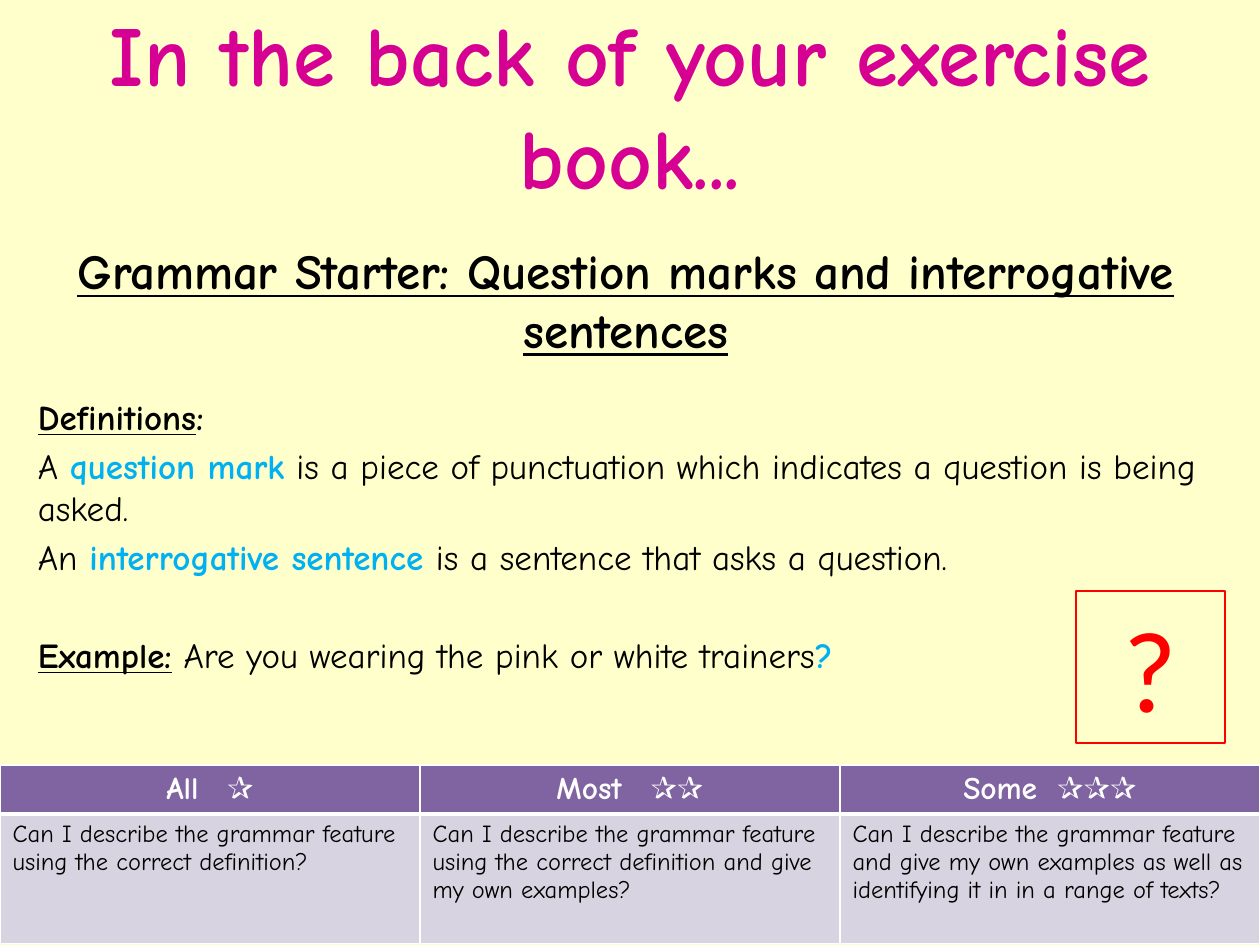
from lxml.etree import SubElement
from pptx import Presentation
from pptx.dml.color import RGBColor
from pptx.enum.text import MSO_ANCHOR, MSO_AUTO_SIZE, PP_ALIGN as Align
from pptx.oxml.ns import qn
from pptx.util import Inches, Pt

CREAM = RGBColor(0xFF, 0xFF, 0xCC)
PINK = RGBColor(0xD6, 0x00, 0x93)
BLACK = RGBColor(0, 0, 0)
SKY = RGBColor(0x00, 0xB0, 0xF0)
RED = RGBColor(0xFF, 0, 0)
WHITE = RGBColor(0xFF, 0xFF, 0xFF)
PURPLE = RGBColor(0x80, 0x64, 0xA2)
LILAC = RGBColor(0xD8, 0xD3, 0xE0)
HAND_FONT = "Comic Neue"

# Run styles: colour, bold, underline
PLAIN = (BLACK, False, False)
BOLD = (BLACK, True, False)
HEADING = (BLACK, True, True)
KEY = (SKY, True, False)

TITLE = "In the back of your exercise book..."
# Alignment, size, space before, runs
BODY = [
    (Align.CENTER, 28, 5.6, [
        ("Grammar Starter: Question marks and interrogative sentences", HEADING)]),
    (Align.JUSTIFY, 20, 21, [("Definitions", HEADING), (": ", BOLD)]),
    (Align.LEFT, 20, 4, [
        ("A ", PLAIN), ("question mark", KEY),
        (" is a piece of punctuation which indicates a question is being asked.", PLAIN)]),
    (Align.JUSTIFY, 20, 4, [
        ("An ", PLAIN), ("interrogative sentence ", KEY),
        ("is a sentence that asks a question.", PLAIN)]),
    (Align.JUSTIFY, 20, 32, [
        ("Example:", HEADING),
        (" Are you wearing the pink or white trainers", PLAIN), ("?", KEY)]),
]
# Level, extra gap before the stars in points, stars, goal
GOALS = [
    ("All", 10, "✰", "Can I describe the grammar feature using the correct definition?"),
    ("Most", 10, "✰✰", "Can I describe the grammar feature using the correct definition "
     "and give my own examples?"),
    ("Some", 5, "✰✰✰", "Can I describe the grammar feature and give my own examples "
     "as well as identifying it in in a range of texts?"),
]
ROW_HEIGHTS = (0.38, 1.03)


def add_span(para, text, size, style, font=HAND_FONT):
    span = para.add_run()
    span.text = text
    span.font.name, span.font.size = font, Pt(size)
    span.font.color.rgb, span.font.bold, span.font.underline = style
    return span


def place(shape, left, top, width, height):
    shape.left, shape.top = Inches(left), Inches(top)
    shape.width, shape.height = Inches(width), Inches(height)


def remove_bullet(para):
    properties = para._p.get_or_add_pPr()
    properties.set("marL", "0")
    properties.set("indent", "0")
    SubElement(properties, qn("a:buNone"))


def style_cell(cell, fill, bottom_width):
    """Draw white borders, then the fill, in the order the schema needs."""
    properties = cell._tc.get_or_add_tcPr()
    for side, width in zip("LRTB", (1, 1, 1, bottom_width)):
        line = SubElement(properties, qn(f"a:ln{side}"), w=str(Pt(width)))
        solid = SubElement(line, qn("a:solidFill"))
        SubElement(solid, qn("a:srgbClr"), val=str(WHITE))
    cell.fill.solid()
    cell.fill.fore_color.rgb = fill


def fill_title(title):
    place(title, 0, 0.02, 10, 1.61)
    title.text_frame.auto_size = MSO_AUTO_SIZE.NONE
    title.text_frame.vertical_anchor = MSO_ANCHOR.MIDDLE
    para = title.text_frame.paragraphs[0]
    para.alignment = Align.CENTER
    add_span(para, TITLE, 48.6, (PINK, True, False))


def fill_body(body):
    place(body, 0.2, 1.86, 9.53, 4.84)
    frame = body.text_frame
    frame.auto_size = MSO_AUTO_SIZE.NONE
    for index, (alignment, size, space, spans) in enumerate(BODY):
        para = frame.add_paragraph() if index else frame.paragraphs[0]
        para.alignment = alignment
        para.space_before = Pt(space)
        remove_bullet(para)
        for text, style in spans:
            add_span(para, text, size, style)


def add_goal_table(slide):
    height = sum(ROW_HEIGHTS)
    table = slide.shapes.add_table(2, len(GOALS), 0, Inches(6.07),
                                   Inches(10), Inches(height)).table
    for row, row_height in zip(table.rows, ROW_HEIGHTS):
        row.height = Inches(row_height)
    for column, (level, gap, stars, goal) in enumerate(GOALS):
        header, detail = table.cell(0, column), table.cell(1, column)
        style_cell(header, PURPLE, 3)
        style_cell(detail, LILAC, 1)
        para = header.text_frame.paragraphs[0]
        para.alignment = Align.CENTER
        white_bold = (WHITE, True, False)
        add_span(para, level, 18, white_bold)
        space = add_span(para, " ", 18, white_bold)
        space.font._element.set("spc", str(gap * 100))
        add_span(para, stars, 18, white_bold)
        add_span(detail.text_frame.paragraphs[0], goal, 14, PLAIN)


def add_question_mark(slide):
    box = slide.shapes.add_textbox(Inches(8.54), Inches(4.69), Inches(1.18), Inches(1.21))
    box.line.color.rgb = RED
    box.line.width = Pt(1)
    box.text_frame.word_wrap = True
    box.text_frame.auto_size = MSO_AUTO_SIZE.SHAPE_TO_FIT_TEXT
    para = box.text_frame.paragraphs[0]
    para.alignment = Align.CENTER
    add_span(para, "?", 66, (RED, False, False), "Calibri")


def main():
    deck = Presentation()
    deck.slide_width, deck.slide_height = Inches(10), Inches(7.5)
    slide = deck.slides.add_slide(deck.slide_layouts[1])
    slide.background.fill.solid()
    slide.background.fill.fore_color.rgb = CREAM
    fill_title(slide.shapes.title)
    fill_body(slide.placeholders[1])
    add_goal_table(slide)
    add_question_mark(slide)
    deck.save("out.pptx")


if __name__ == "__main__":
    main()
